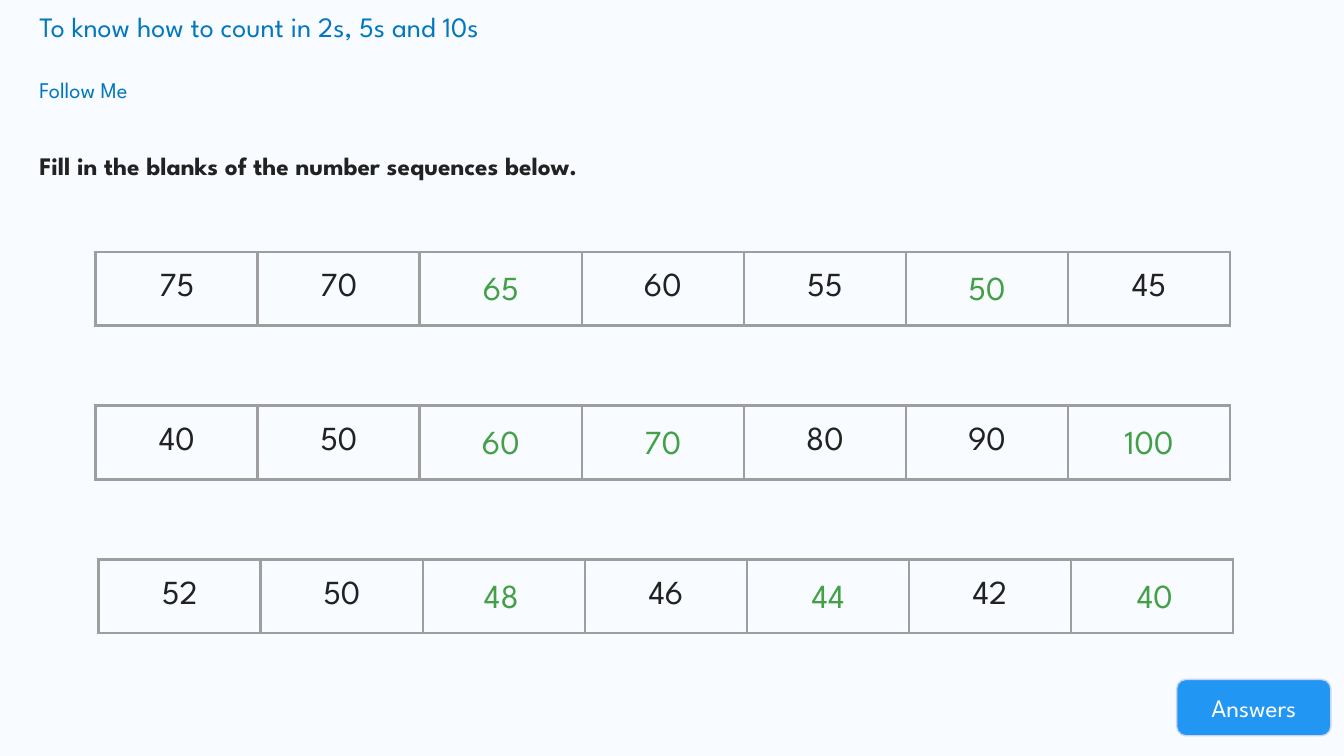
from lxml.etree import SubElement
from pptx import Presentation
from pptx.dml.color import RGBColor
from pptx.enum.shapes import MSO_SHAPE
from pptx.enum.text import MSO_ANCHOR, MSO_AUTO_SIZE, PP_ALIGN
from pptx.oxml.ns import qn
from pptx.util import Inches, Pt

COLORS = {
    "background": "F8FBFF",
    "heading": "0277BD",
    "ink": "222222",
    "answer": "43A047",
    "grid": "9E9E9E",
    "button": "2196F3",
    "button_edge": "CCD4F4",
    "white": "FFFFFF",
}
FONT = "League Spartan"
CELL_WIDTH = 11.25 / 7
ROW_HEIGHT = 0.73
FIRST_TOP = 2.5
ROW_STEP = 3.05 / 2

SEQUENCES = [
    (0.95, ["75", "70", "", "60", "55", "", "45"], {2: "65", 5: "50"}, 0.95, CELL_WIDTH),
    (0.95, ["40", "50", "", "", "80", "90", ""], {2: "60", 3: "70", 6: "100"}, 0.95, CELL_WIDTH),
    (0.98, ["52", "50", "", "46", "", "42", ""], {2: "48", 4: "44", 6: "40"}, 0.93, 1.62),
]


class Worksheet:
    def __init__(self, slide):
        self.slide = slide
        background = slide.background.fill
        background.solid()
        background.fore_color.rgb = self.color("background")

    def color(self, name):
        return RGBColor.from_string(COLORS[name])

    def set_text(self, frame, text, size, color, align=PP_ALIGN.CENTER, bold=False):
        paragraph = frame.paragraphs[0]
        paragraph.text = text
        paragraph.alignment = align
        paragraph.font.size = Pt(size)
        paragraph.font.name = FONT
        paragraph.font.bold = bold
        paragraph.font.color.rgb = self.color(color)
        return paragraph

    def heading(self, placeholder, box, text, size, color, bold=False, spacing=1.0):
        placeholder.left, placeholder.top, placeholder.width, placeholder.height = map(Inches, box)
        frame = placeholder.text_frame
        frame.word_wrap = True
        frame.auto_size = MSO_AUTO_SIZE.NONE
        frame.vertical_anchor = MSO_ANCHOR.TOP
        properties = frame.paragraphs[0]._p.get_or_add_pPr()
        properties.set("marL", "0")
        properties.set("indent", "0")
        SubElement(properties, qn("a:buNone"))
        paragraph = self.set_text(frame, text, size, color, PP_ALIGN.LEFT, bold)
        paragraph.line_spacing = spacing
        paragraph.space_before = Pt(0)

    def button(self, box, text):
        button = self.slide.shapes.add_shape(MSO_SHAPE.ROUNDED_RECTANGLE, *map(Inches, box))
        button.shadow.inherit = False
        button.fill.solid()
        button.fill.fore_color.rgb = self.color("button")
        button.line.color.rgb = self.color("button_edge")
        button.line.width = Pt(1)
        button.text_frame.vertical_anchor = MSO_ANCHOR.MIDDLE
        self.set_text(button.text_frame, text, 18, "white")

    def border(self, cell):
        properties = cell._tc.get_or_add_tcPr()
        for position, side in enumerate(("a:lnL", "a:lnR", "a:lnT", "a:lnB")):
            line = properties.makeelement(qn(side), {"w": str(Pt(2.25))})
            fill = SubElement(line, qn("a:solidFill"))
            SubElement(fill, qn("a:srgbClr"), val=COLORS["grid"])
            properties.insert(position, line)

    def sequence(self, left, top, numbers):
        table = self.slide.shapes.add_table(
            1, len(numbers), Inches(left), Inches(top),
            Inches(CELL_WIDTH * len(numbers)), Inches(ROW_HEIGHT),
        ).table
        table.first_row = False
        table.horz_banding = False
        for column, number in enumerate(numbers):
            table.columns[column].width = Inches(CELL_WIDTH)
            cell = table.cell(0, column)
            cell.fill.background()
            cell.vertical_anchor = MSO_ANCHOR.MIDDLE
            cell.margin_left = cell.margin_right = Inches(0.1)
            cell.margin_top = cell.margin_bottom = Inches(0.1)
            self.border(cell)
            if number:
                self.set_text(cell.text_frame, number, 24, "ink")

    def answer(self, left, top, number):
        answer = self.slide.shapes.add_textbox(
            Inches(left), Inches(top), Inches(CELL_WIDTH), Inches(0.7))
        frame = answer.text_frame
        frame.word_wrap = True
        frame.vertical_anchor = MSO_ANCHOR.MIDDLE
        frame.margin_left = frame.margin_right = Inches(0.1)
        frame.margin_top = frame.margin_bottom = Inches(0.1)
        self.set_text(frame, number, 24, "answer")


def main():
    presentation = Presentation()
    presentation.slide_width = Inches(13.33)
    presentation.slide_height = Inches(7.5)
    slide = presentation.slides.add_slide(presentation.slide_layouts[3])
    worksheet = Worksheet(slide)
    objective, section, instruction = slide.placeholders

    worksheet.heading(objective, (0.29, 0.04, 12.34, 0.44),
                      "To know how to count in 2s, 5s and 10s", 20, "heading")
    worksheet.heading(section, (0.29, 0.71, 2.97, 0.46), "Follow Me", 16, "heading")
    worksheet.heading(instruction, (0.29, 1.29, 12.84, 0.7),
                      "Fill in the blanks of the number sequences below.",
                      18, "ink", bold=True, spacing=1.5)
    worksheet.button((11.67, 6.74, 1.53, 0.56), "Answers")

    for row, (left, numbers, answers, answer_left, answer_step) in enumerate(SEQUENCES):
        top = FIRST_TOP + row * ROW_STEP
        worksheet.sequence(left, top, numbers)
        for column, number in answers.items():
            worksheet.answer(answer_left + column * answer_step, top, number)

    presentation.save("out.pptx")


if __name__ == "__main__":
    main()
